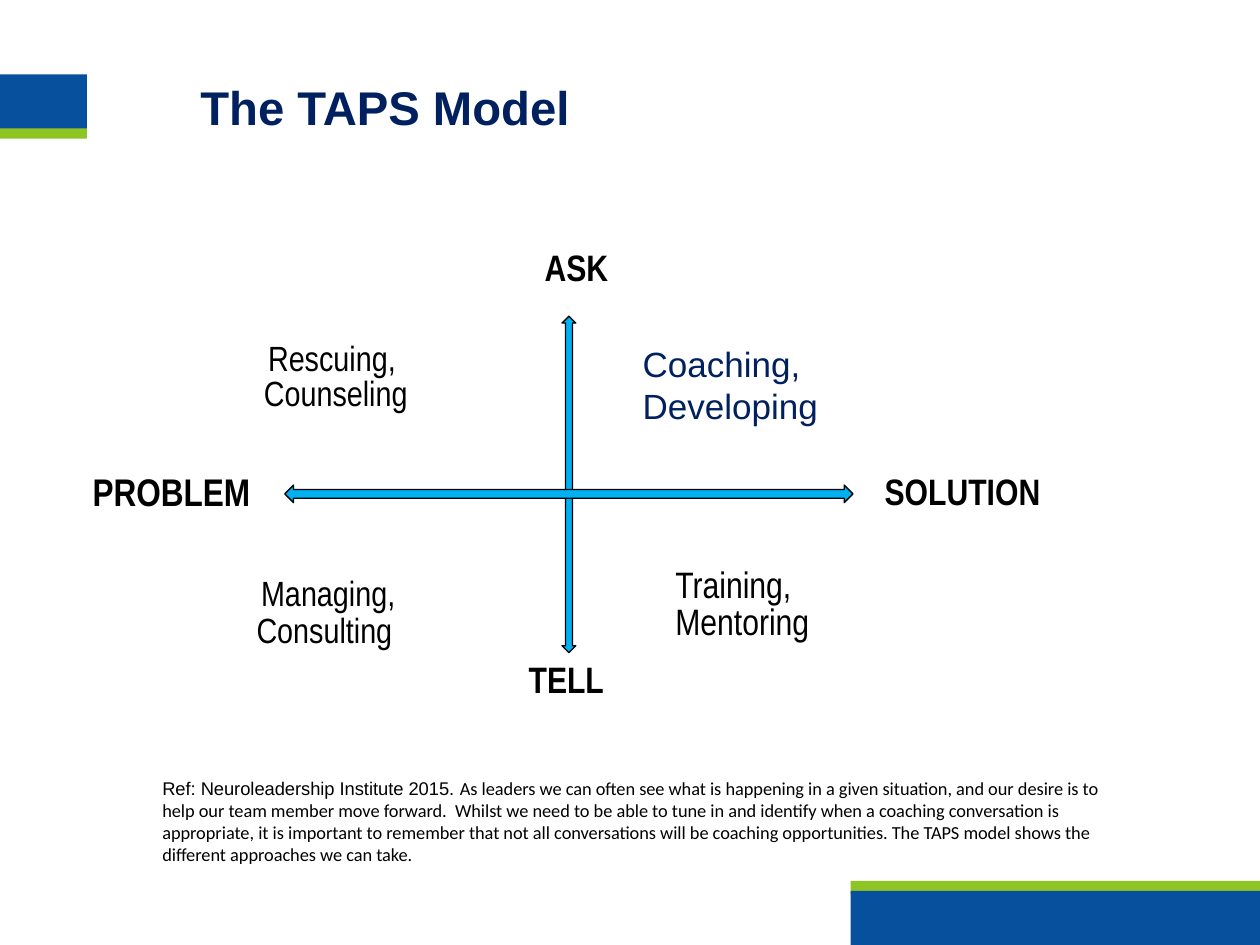
import pptx
import pptx.util
import pptx.dml.color
import pptx.enum.shapes
import lxml.etree

deck = pptx.Presentation()
deck.slide_width = pptx.util.Inches(10)
deck.slide_height = pptx.util.Inches(7.5)
column = deck.slide_width / 100
row = deck.slide_height / 75
page = deck.slides.add_slide(deck.slide_layouts[6])
shape_kinds = pptx.enum.shapes.MSO_SHAPE
center = pptx.enum.text.PP_ALIGN.CENTER
left = pptx.enum.text.PP_ALIGN.LEFT


def color(text):
    return pptx.dml.color.RGBColor.from_string(text)


def add_span(para, text, size, name, ink, bold=False):
    span = para.add_run()
    span.text = text
    formats = {"size": pptx.util.Pt(size), "name": name, "bold": bold}
    for key, value in formats.items():
        setattr(span.font, key, value)
    span.font.color.rgb = color(ink)


bars = [
    (67.5, 69.9, 32.5, 1.1, "8EC423"),
    (67.5, 70.7, 32.5, 4.3, "06509D"),
    (0, 9.9, 6.9, 1.1, "8EC423"),
    (0, 5.9, 6.9, 4.3, "06509D"),
]
for x, y, width, height, fill in bars:
    bar = page.shapes.add_shape(shape_kinds.RECTANGLE, int(x * column), int(y * row),
                                int(width * column), int(height * row))
    bar.shadow.inherit = False
    bar.fill.solid()
    bar.fill.fore_color.rgb = color(fill)
    bar.line.fill.background()

title = page.shapes.add_textbox(int(15.9 * column), int(6.7 * row),
                                int(65.9 * column), int(3.8 * row)).text_frame
title_format = {"word_wrap": True, "margin_left": 0, "margin_top": 0}
for key, value in title_format.items():
    setattr(title, key, value)
title.paragraphs[0].line_spacing = 0.9
add_span(title.paragraphs[0], "The TAPS Model", 27, "Arial", "002060", True)

widths = [14.4, 16.1, 13.5, 2.6, 14.7, 17.4]
heights = [1.7, 1.4, 3.5, 3.5, 7, 3.4, 3.6, 3.5, 7.2, 3.5]
frame = page.shapes.add_table(len(heights), len(widths), int(6.4 * column), int(16.9 * row),
                              int(sum(widths) * column), int(sum(heights) * row))
model = frame.table
model.first_row = False
model.horz_banding = False
for index, width in enumerate(widths):
    model.columns[index].width = int(width * column)
for index, height in enumerate(heights):
    model.rows[index].height = int(height * row)

cell_format = {"margin_left": int(0.6 * column), "margin_right": int(0.6 * column),
               "margin_top": 0, "margin_bottom": 0}
for cell in model.iter_cells():
    for key, value in cell_format.items():
        setattr(cell, key, value)
    cell.fill.solid()
    cell.fill.fore_color.rgb = color("FFFFFF")

merges = [
    (0, 0, 0, 5), (1, 0, 1, 5), (2, 0, 2, 5),
    (3, 0, 3, 1), (3, 2, 5, 2), (3, 3, 3, 5),
    (4, 0, 5, 1), (4, 3, 4, 5), (5, 3, 5, 5), (6, 1, 6, 4),
    (7, 0, 9, 1), (7, 2, 8, 3), (7, 4, 7, 5),
    (8, 4, 8, 5), (9, 2, 9, 3), (9, 4, 9, 5),
]
for top, start, bottom, end in merges:
    model.cell(top, start).merge(model.cell(bottom, end))

labels = [
    (2, 0, [("ASK", 0)], 21, "Arial Narrow", "000000", True, center),
    (4, 0, [("Rescuing,", 9.4), ("Counseling", 10)], 20, "Arial Narrow", "000000", False, center),
    (4, 3, [("Coaching,", 0), ("Developing", 0)], 20, "Arial", "002060", False, left),
    (6, 0, [("PROBLEM", 0)], 22, "Arial Narrow", "000000", True, center),
    (6, 5, [("SOLUTION", 0)], 21, "Arial Narrow", "000000", True, center),
    (7, 0, [("Managing,", 8.8), ("Consulting", 8.2)], 20, "Arial Narrow", "000000", False, center),
    (8, 4, [("Training,", 0), ("Mentoring", 0)], 21, "Arial Narrow", "000000", False, left),
    (9, 2, [("TELL", 0)], 21, "Arial Narrow", "000000", True, center),
]
for top, start, lines, size, name, ink, bold, align in labels:
    text_frame = model.cell(top, start).text_frame
    for index, (text, indent) in enumerate(lines):
        para = text_frame.add_paragraph() if index else text_frame.paragraphs[0]
        para.alignment = align
        para.line_spacing = 1.07
        if indent:
            para._p.get_or_add_pPr().set("marL", str(int(indent * column)))
        add_span(para, text, size, name, ink, bold)
managing = model.cell(7, 0)
managing.margin_top = int(4.2 * row)
managing.text_frame.paragraphs[1].space_before = pptx.util.Pt(1)

for cell in model.iter_cells():
    para = cell.text_frame.paragraphs[0]
    if not para.runs:
        lxml.etree.SubElement(para._p, pptx.oxml.ns.qn("a:endParaRPr")).set("sz", "600")

reference = page.shapes.add_textbox(int(11.9 * column), int(61.2 * row),
                                    int(78.6 * column), int(9.1 * row)).text_frame
reference.word_wrap = True
spans = [
    ("Ref: Neuroleadership Institute 2015. ", "Arial"),
    ("As leaders we can often see what is happening in a given situation, and our desire is to "
     "help our team member move forward.  Whilst we need to be able to tune in and identify when "
     "a coaching conversation is appropriate, it is important to remember that not all "
     "conversations will be coaching opportunities. The TAPS model shows the different "
     "approaches we can take.", "Calibri"),
]
for text, name in spans:
    add_span(reference.paragraphs[0], text, 10.5, name, "000000")

arrows = [(31.8, 37.9, 26.7, 1.1, 90), (22.6, 38.5, 45.1, 1.4, 0)]
for x, y, width, height, turn in arrows:
    arrow = page.shapes.add_shape(shape_kinds.LEFT_RIGHT_ARROW, int(x * column), int(y * row),
                                  int(width * column), int(height * row))
    arrow.rotation = turn
    arrow.shadow.inherit = False
    arrow.fill.solid()
    arrow.fill.fore_color.rgb = color("00B0F0")
    arrow.line.color.rgb = color("000000")
    arrow.line.width = pptx.util.Pt(0.75)

deck.save("out.pptx")
